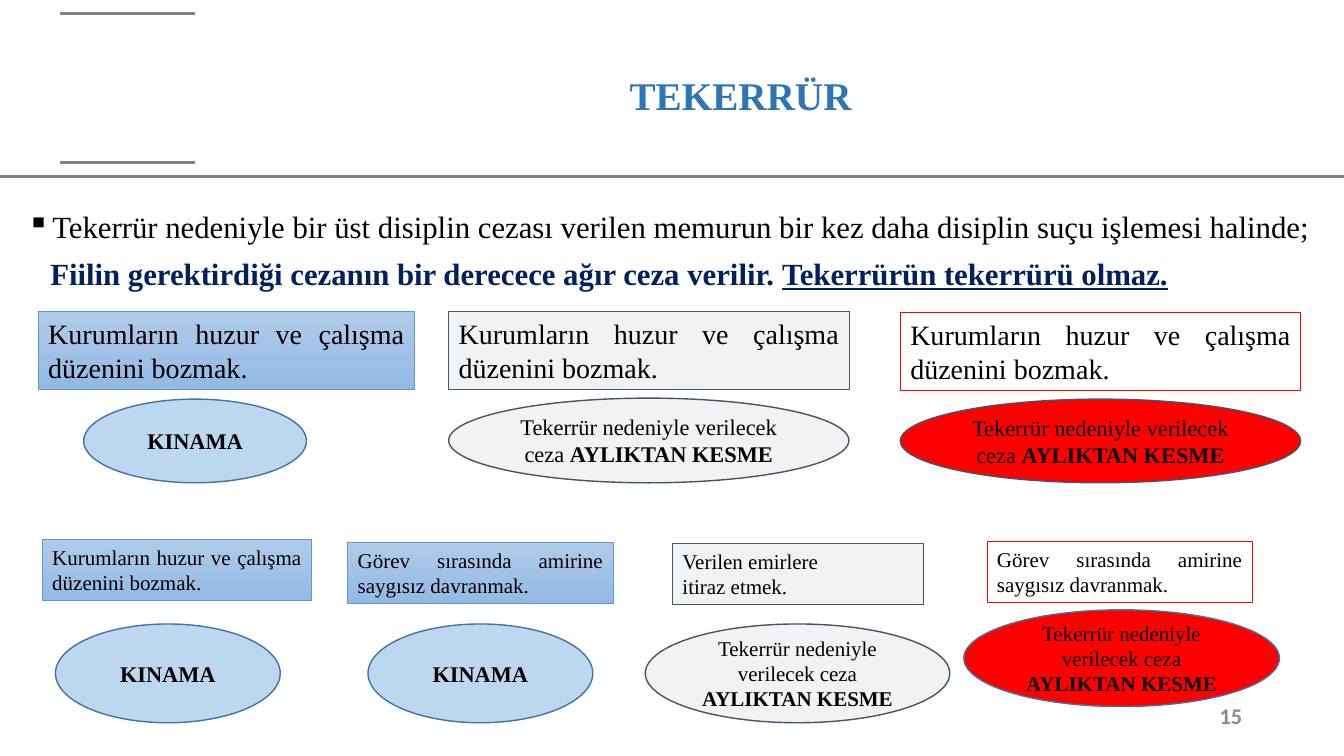
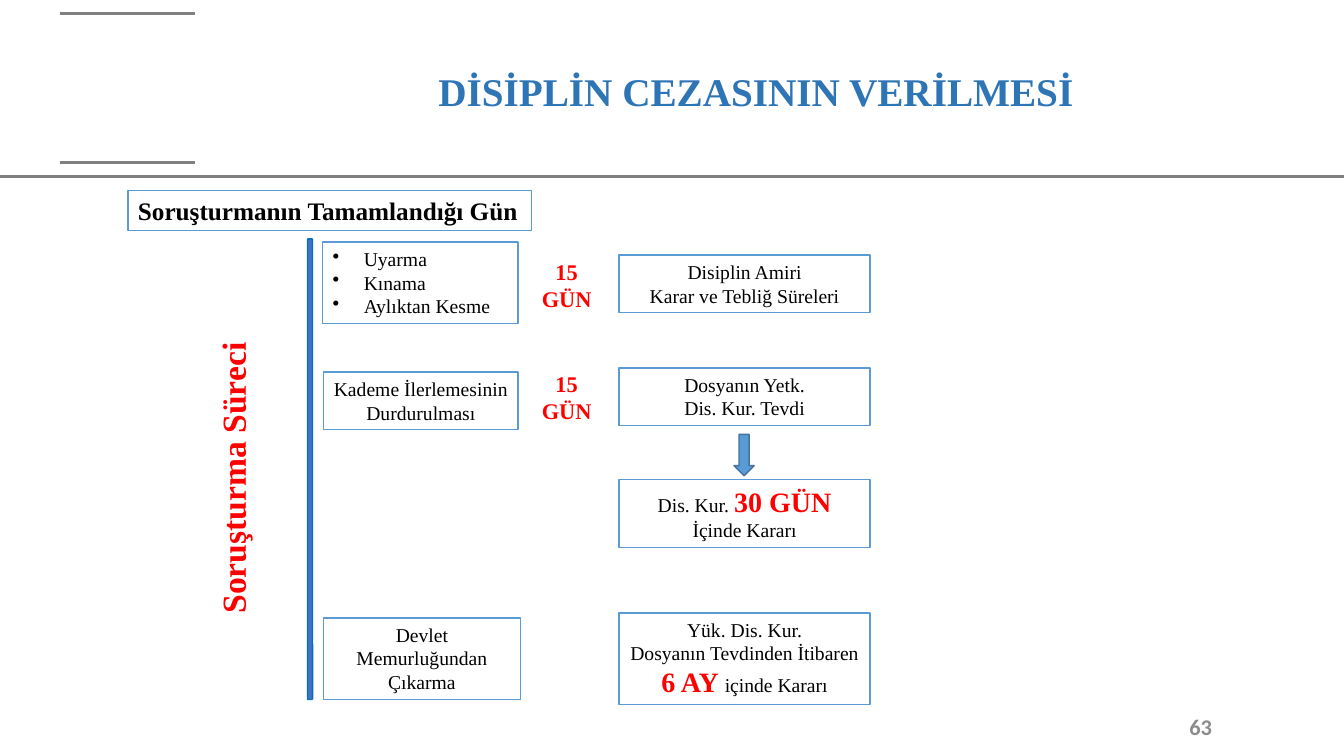
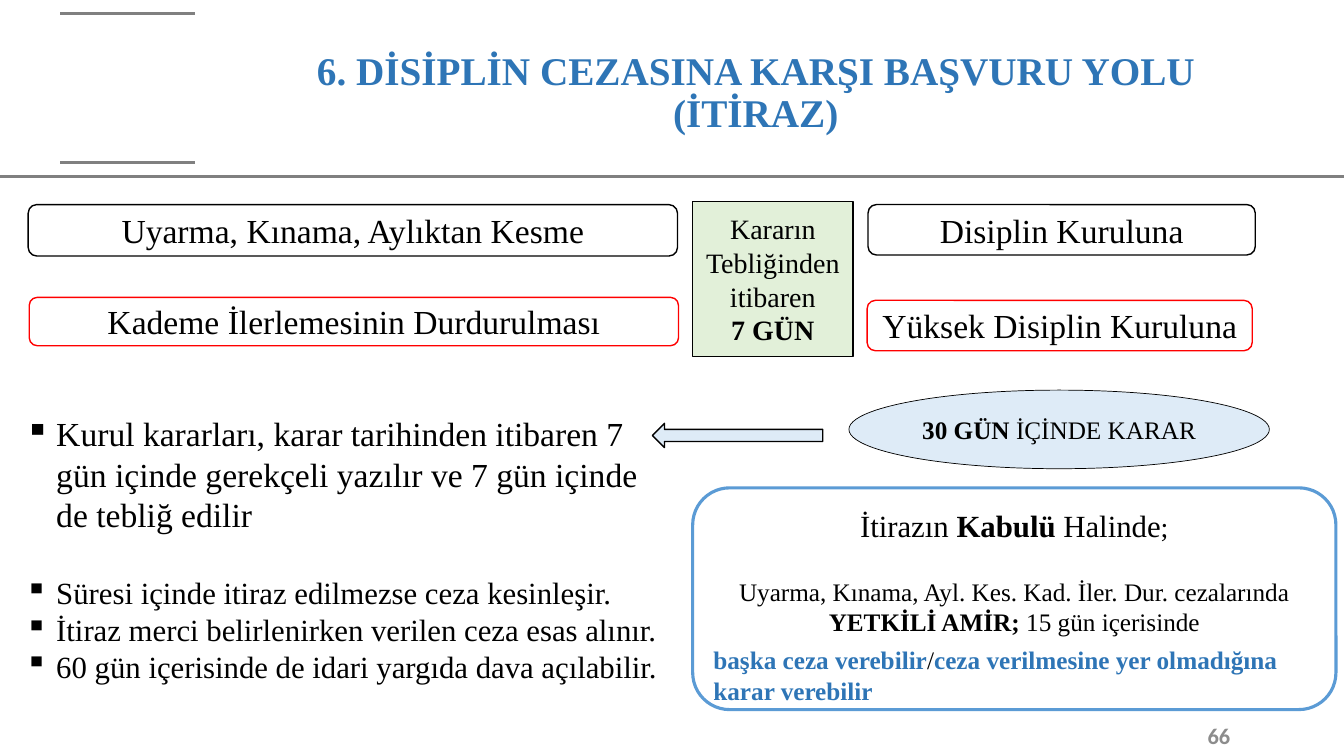
from dataclasses import dataclass

from lxml.etree import SubElement
from pptx import Presentation
from pptx.dml.color import RGBColor
from pptx.enum.shapes import MSO_CONNECTOR as Connector, MSO_SHAPE as Preset
from pptx.enum.text import MSO_ANCHOR as Anchor, PP_ALIGN as Align
from pptx.oxml.ns import qn
from pptx.util import Inches, Pt


@dataclass(frozen=True)
class Theme:
    font: str = "Times New Roman"
    number_font: str = "Calibri"
    black: str = "000000"
    white: str = "FFFFFF"
    red: str = "FF0000"
    navy: str = "002060"
    title: str = "2E75B6"
    rule: str = "808080"
    number: str = "8C8C8C"
    blue: str = "5B9BD5"
    blue_edge: str = "43739E"
    slate: str = "44546A"
    light_blue: str = "BDD7EE"
    pale_blue: str = "DEEBF7"
    pale_grey: str = "F2F2F2"
    pale_green: str = "E2F0D9"
    bar: str = "4472C4"
    bar_edge: str = "0070C0"
    gradient: tuple = ("B1CBE9", "93B9E4")
    title_size: int = 28
    large: int = 24
    lead: int = 22
    medium: int = 20
    body: int = 18
    label: int = 16
    small: int = 15
    tiny: int = 14


THEME = Theme()


@dataclass(frozen=True)
class Box:
    left: float
    top: float
    width: float
    height: float

    def inside(self, left, top, width, height):
        return Box(self.left + left, self.top + top, width, height)

    def lengths(self):
        return [Inches(value) for value in (self.left, self.top, self.width, self.height)]


PAGE = Box(0, 0, 13.33, 7.5)


# Text: a line is its runs plus its paragraph format
def line(*runs, bullet=None, indent=0, **values):
    return runs, bullet, indent, values


def bold(text, **values):
    return text, {"bold": True, **values}


def add_bullet(paragraph, character, indent):
    properties = paragraph._p.get_or_add_pPr()
    properties.set("marL", str(Inches(indent)))
    if character:
        properties.set("indent", str(-Inches(indent)))
        SubElement(properties, qn("a:buChar")).set("char", character)


def write(shape, lines, size, color=THEME.black, font=THEME.font, strong=False,
          align=Align.LEFT, anchor=Anchor.TOP, wrap=True):
    frame = shape.text_frame
    frame.word_wrap = wrap
    frame.vertical_anchor = anchor
    for index, item in enumerate(lines):
        runs, bullet, indent, values = line(item) if isinstance(item, str) else item
        paragraph = frame.paragraphs[0] if index == 0 else frame.add_paragraph()
        if indent:
            add_bullet(paragraph, bullet, indent)
        for name, value in {"alignment": align, **values}.items():
            setattr(paragraph, name, value)
        for part in runs:
            text, changes = (part, {}) if isinstance(part, str) else part
            run = paragraph.add_run()
            run.text = text
            style = {"name": font, "size": size, "bold": strong, "color": color, **changes}
            run.font.color.rgb = RGBColor.from_string(style.pop("color"))
            style["size"] = Pt(style["size"])
            for name, value in style.items():
                setattr(run.font, name, value)


def add_text(slide, box, lines, size, **values):
    shape = slide.shapes.add_textbox(*box.lengths())
    write(shape, lines, size, **values)
    return shape


def add_shape(slide, preset, box, fill, edge, width=1, lines=(), size=THEME.body, **values):
    shape = slide.shapes.add_shape(preset, *box.lengths())
    shape.shadow.inherit = False
    if isinstance(fill, tuple):
        shape.fill.gradient()
        shape.fill.gradient_angle = 270
        for stop, color in zip(shape.fill.gradient_stops, fill):
            stop.color.rgb = RGBColor.from_string(color)
    else:
        shape.fill.solid()
        shape.fill.fore_color.rgb = RGBColor.from_string(fill)
    shape.line.color.rgb = RGBColor.from_string(edge)
    shape.line.width = Pt(width)
    if lines:
        write(shape, lines, size, **values)
    return shape


CENTERED = {"align": Align.CENTER, "anchor": Anchor.MIDDLE}


# Shared frame: rules, title and page number
def add_rule(slide, left, right, top):
    rule = slide.shapes.add_connector(
        Connector.STRAIGHT, Inches(left), Inches(top), Inches(right), Inches(top))
    rule.line.color.rgb = RGBColor.from_string(THEME.rule)
    rule.line.width = Pt(2.25)
    SubElement(rule._element.spPr, qn("a:effectLst"))


def start_slide(presentation, title, title_box, number, number_box):
    slide = presentation.slides.add_slide(presentation.slide_layouts[6])
    add_rule(slide, 0, PAGE.width, 1.75)
    for top in (0.13, 1.61):
        add_rule(slide, 0.6, 1.93, top)
    add_text(slide, title_box, [line(title, line_spacing=0.9)], THEME.title_size,
             color=THEME.title, strong=True, **CENTERED)
    add_text(slide, number_box, [number], THEME.label, color=THEME.number,
             font=THEME.number_font, strong=True, align=Align.RIGHT, anchor=Anchor.MIDDLE)
    return slide


# Slide 1: each case is an offence box with its penalty below
CASE_STYLES = {  # offence fill, offence edge, penalty fill, penalty edge
    "first": (THEME.gradient, THEME.blue, THEME.light_blue, THEME.blue_edge),
    "repeat": (THEME.pale_grey, THEME.slate, THEME.pale_grey, THEME.slate),
    "again": (THEME.white, THEME.red, THEME.red, THEME.slate),
    "last": (THEME.white, THEME.red, THEME.red, THEME.blue_edge),
}


def add_case(slide, box, style, offence, offence_size, oval, penalty, penalty_size):
    fill, edge, oval_fill, oval_edge = CASE_STYLES[style]
    align = Align.JUSTIFY if len(offence) == 1 else Align.LEFT
    add_shape(slide, Preset.RECTANGLE, box, fill, edge, 0.5, offence, offence_size, align=align)
    add_shape(slide, Preset.OVAL, box.inside(*oval), oval_fill, oval_edge, 1,
              penalty, penalty_size, **CENTERED)


def add_repetition_slide(presentation):
    slide = start_slide(presentation, "TEKERRÜR", Box(2.42, 0.44, 9.85, 1.06),
                        "15", Box(11.65, 6.9, 0.77, 0.4))
    add_text(slide, Box(0.17, 2.05, 12.99, 0.95), [
        line("Tekerrür nedeniyle bir üst disiplin cezası verilen memurun bir kez daha "
             "disiplin suçu işlemesi halinde;", bullet="▪", indent=0.25, line_spacing=0.9),
        line(bold("Fiilin gerektirdiği cezanın bir derecece ağır ceza verilir. ", color=THEME.navy),
             bold("Tekerrürün tekerrürü olmaz.", color=THEME.navy, underline=True),
             indent=0.23, line_spacing=0.9, space_before=Pt(10)),
    ], THEME.lead)

    peace = ["Kurumların huzur ve çalışma düzenini bozmak."]
    respect = ["Görev sırasında amirine saygısız davranmak."]
    orders = ["Verilen emirlere", "itiraz etmek."]
    reprimand = [line(bold("KINAMA"))]
    cut = bold("AYLIKTAN KESME")
    repeated = [line("Tekerrür nedeniyle verilecek ceza ", cut)]
    repeated_split = ["Tekerrür nedeniyle verilecek ceza", line(cut)]

    # Upper row: the same offence three times
    for box, style, oval, penalty in (
        (Box(0.38, 3.09, 3.73, 0.77), "first", (0.45, 0.87, 2.21, 0.83), reprimand),
        (Box(4.45, 3.09, 3.97, 0.77), "repeat", (0, 0.86, 3.97, 0.84), repeated),
        (Box(8.93, 3.1, 3.97, 0.77), "again", (0, 0.86, 3.97, 0.83), repeated),
    ):
        add_case(slide, box, style, peace, THEME.medium, oval, penalty, THEME.label)

    # Lower row: different offences
    for box, style, offence, oval, penalty, size in (
        (Box(0.42, 5.35, 2.67, 0.61), "first", peace,
         (0.13, 0.84, 2.23, 0.98), reprimand, THEME.label),
        (Box(3.45, 5.38, 2.63, 0.61), "first", respect,
         (0.2, 0.81, 2.23, 0.98), reprimand, THEME.label),
        (Box(6.67, 5.39, 2.49, 0.61), "repeat", orders,
         (-0.27, 0.8, 3.02, 0.98), repeated, THEME.small),
        (Box(9.79, 5.37, 2.63, 0.61), "last", respect,
         (-0.23, 0.68, 3.13, 0.96), repeated_split, THEME.small),
    ):
        add_case(slide, box, style, offence, THEME.small, oval, penalty, size)


# Slide 2: timeline of the decision
def add_steps(slide, box):
    def deadline(text):
        return bold(text, size=THEME.medium, color=THEME.red)

    penalties = [line(text, bullet="•", indent=0.31, alignment=Align.LEFT)
                 for text in ("Uyarma", "Kınama", "Aylıktan Kesme")]
    for place, lines in (
        ((0.15, 0.03, 1.94, 0.81), penalties),
        ((0.16, 1.32, 1.93, 0.57), ["Kademe İlerlemesinin", "Durdurulması"]),
        ((0.16, 3.76, 1.95, 0.81), ["Devlet", "Memurluğundan", "Çıkarma"]),
        ((3.09, 0.16, 2.49, 0.57), ["Disiplin Amiri", "Karar ve Tebliğ Süreleri"]),
        ((3.09, 1.28, 2.49, 0.57), ["Dosyanın Yetk.", "Dis. Kur. Tevdi"]),
        ((3.09, 2.39, 2.49, 0.67), [line("Dis. Kur. ", deadline("30 GÜN")), "İçinde Kararı"]),
        ((3.09, 3.71, 2.49, 0.91), ["Yük. Dis. Kur.", "Dosyanın Tevdinden İtibaren",
                                    line(deadline("6 AY "), "içinde Kararı")]),
    ):
        add_shape(slide, Preset.RECTANGLE, box.inside(*place), THEME.white, THEME.blue, 1,
                  lines, THEME.tiny, align=Align.CENTER, wrap=lines is penalties)
    for top in (0.14, 1.25):
        add_text(slide, box.inside(2.22, top, 0.7, 0.64), ["15", "GÜN"], THEME.label,
                 color=THEME.red, strong=True, align=Align.CENTER, wrap=False)
    add_shape(slide, Preset.ROUNDED_RECTANGLE, box.inside(0, 0, 0.05, box.height),
              THEME.bar, THEME.bar_edge)
    add_shape(slide, Preset.DOWN_ARROW, box.inside(4.23, 1.94, 0.2, 0.41),
              THEME.blue, THEME.blue_edge)


def add_decision_slide(presentation):
    slide = start_slide(presentation, "DİSİPLİN CEZASININ VERİLMESİ", Box(2.57, 0.4, 9.85, 1.06),
                        "63", Box(9.12, 7.01, 3, 0.4))
    add_shape(slide, Preset.RECTANGLE, Box(1.27, 1.89, 4, 0.4), THEME.white, THEME.blue, 1,
              ["Soruşturmanın Tamamlandığı Gün"], THEME.body, strong=True, wrap=False)
    process = add_text(slide, Box(0.84, 4.47, 2.93, 0.5), ["Soruşturma Süreci"], THEME.large,
                       color=THEME.red, strong=True)
    process.rotation = 270
    add_steps(slide, Box(3.05, 2.37, 5.58, 4.57))


# Slide 3: where to appeal, and what follows
def add_appeal_routes(slide, box):
    for place, edge, text in (
        ((0, 0.03, 6.44, 0.51), THEME.black, "Uyarma, Kınama, Aylıktan Kesme"),
        ((8.33, 0.03, 3.84, 0.5), THEME.black, "Disiplin Kuruluna"),
        ((0.01, 0.95, 6.44, 0.48), THEME.red, "Kademe İlerlemesinin Durdurulması"),
        ((8.32, 0.98, 3.82, 0.5), THEME.red, "Yüksek Disiplin Kuruluna"),
    ):
        add_shape(slide, Preset.ROUNDED_RECTANGLE, box.inside(*place), THEME.white, edge, 1,
                  [text], THEME.large, **CENTERED)
    add_shape(slide, Preset.RECTANGLE, box.inside(6.59, 0, 1.59, box.height),
              THEME.pale_green, THEME.black, 1,
              ["Kararın Tebliğinden itibaren", line(bold("7 GÜN"))], THEME.medium, **CENTERED)


def add_outcome(slide, box):
    panel = add_shape(slide, Preset.ROUNDED_RECTANGLE, box, THEME.white, THEME.blue, 2.25, [
        line(("İtirazın ", {"size": THEME.lead}), bold("Kabulü", size=THEME.lead),
             (" Halinde", {"size": THEME.lead}), (";", {"size": THEME.medium}),
             alignment=Align.CENTER),
        line("Uyarma, Kınama, Ayl. Kes. Kad. İler. Dur. cezalarında ", bold("YETKİLİ AMİR; "),
             "15 gün içerisinde", alignment=Align.CENTER,
             space_before=Pt(23), space_after=Pt(6)),
        line(bold("başka ceza verebilir", color=THEME.title), "/",
             bold("ceza verilmesine yer olmadığına karar verebilir", color=THEME.title)),
    ], THEME.body)
    panel.text_frame.margin_top = Inches(0.08)


def add_appeal_slide(presentation):
    slide = start_slide(presentation, "6. DİSİPLİN CEZASINA KARŞI BAŞVURU YOLU (İTİRAZ)",
                        Box(2.57, 0.4, 9.85, 1.06), "66", Box(11.53, 7.1, 0.77, 0.4))
    add_appeal_routes(slide, Box(0.28, 2, 12.17, 1.54))

    # Rules on the left
    ruling = ("Kurul kararları, karar tarihinden itibaren 7 gün içinde gerekçeli yazılır "
              "ve 7 gün içinde de tebliğ edilir")
    notes = ("Süresi içinde itiraz edilmezse ceza kesinleşir.",
             "İtiraz merci belirlenirken verilen ceza esas alınır.",
             "60 gün içerisinde de idari yargıda dava açılabilir.")
    square = {"bullet": "▪", "indent": 0.31}
    add_text(slide, Box(0.15, 4.05, 6.64, 3.2), [
        line((ruling, {"size": THEME.large}), **square),
        *(line(note, space_before=Pt(0 if index else 28), **square)
          for index, note in enumerate(notes)),
    ], THEME.lead)

    # Decision and outcome on the right
    add_outcome(slide, Box(6.87, 4.84, 6.38, 2.2))
    add_shape(slide, Preset.OVAL, Box(8.42, 3.87, 4.17, 0.78), THEME.pale_blue, THEME.black, 0.5,
              [line(bold("30 GÜN"), " İÇİNDE KARAR")], THEME.body, **CENTERED)
    add_shape(slide, Preset.LEFT_ARROW, Box(6.47, 4.2, 1.69, 0.24), THEME.pale_blue, THEME.black)


def main():
    presentation = Presentation()
    presentation.slide_width = Inches(PAGE.width)
    presentation.slide_height = Inches(PAGE.height)
    add_repetition_slide(presentation)
    add_decision_slide(presentation)
    add_appeal_slide(presentation)
    presentation.save("out.pptx")


if __name__ == "__main__":
    main()
